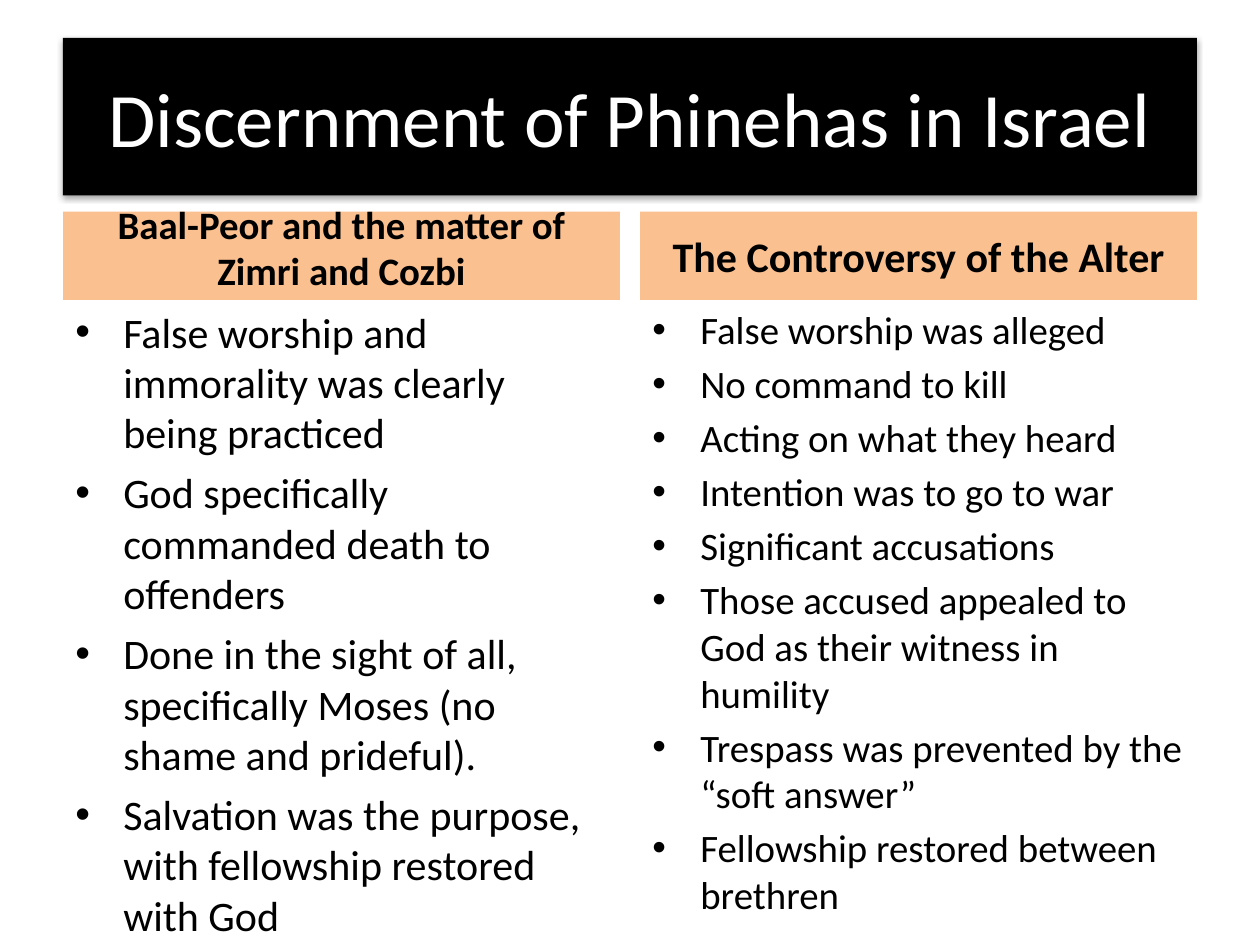
from lxml import etree
from pptx import Presentation
from pptx.dml.color import RGBColor
from pptx.enum.shapes import MSO_SHAPE
from pptx.enum.text import MSO_ANCHOR, PP_ALIGN
from pptx.oxml.ns import qn
from pptx.util import Inches, Pt

BLACK = RGBColor(0x00, 0x00, 0x00)
WHITE = RGBColor(0xFF, 0xFF, 0xFF)
PEACH = RGBColor(0xFA, 0xC0, 0x90)
RECT = MSO_SHAPE.RECTANGLE
CENTER = PP_ALIGN.CENTER
MIDDLE = MSO_ANCHOR.MIDDLE
BOTTOM = MSO_ANCHOR.BOTTOM
FONT = "Calibri"

WIDE, HIGH = 10, 7.5
EDGE, GAP = 0.5, 0.16
SPAN = WIDE - 2 * EDGE
COL = (SPAN - GAP) / 2
TOP, HEAD = 1.68, 0.7

COLUMNS = [
    ("Baal-Peor and the matter of Zimri and Cozbi", 22.2, BOTTOM, 4.77, 24, 5.5, [
        "False worship and immorality was clearly being practiced",
        "God specifically commanded death to offenders",
        "Done in the sight of all, specifically Moses (no shame and prideful).",
        "Salvation was the purpose, with fellowship restored with God",
    ]),
    ("The Controversy of the Alter", 24, MIDDLE, 4.32, 22.2, 4.2, [
        "False worship was alleged",
        "No command to kill",
        "Acting on what they heard",
        "Intention was to go to war",
        "Significant accusations",
        "Those accused appealed to God as their witness in humility",
        "Trespass was prevented by the “soft answer”",
        "Fellowship restored between brethren",
    ]),
]


def style(para, size, color, bold=False):
    """Set the font of a paragraph."""
    font = para.font
    font.name, font.size, font.bold = FONT, Pt(size), bold
    font.color.rgb = color


def add_bar(slide, box, fill, text, size, color, anchor, bold=False):
    """Place a filled bar with one centred text."""
    bar = slide.shapes.add_shape(RECT, *map(Inches, box))
    bar.shadow.inherit = False
    bar.fill.solid()
    bar.fill.fore_color.rgb = fill
    bar.line.fill.background()
    frame = bar.text_frame
    frame.word_wrap, frame.vertical_anchor = True, anchor
    para = frame.paragraphs[0]
    para.text, para.alignment = text, CENTER
    style(para, size, color, bold)
    return bar


def add_shade(shape):
    """Give a shape a soft shadow below it."""
    glow = shape._element.spPr.find(qn("a:effectLst"))
    shade = etree.SubElement(glow, qn("a:outerShdw"), blurRad=str(Pt(3.1)),
                             dist=str(Pt(1.8)), dir="5400000", rotWithShape="0")
    tint = etree.SubElement(shade, qn("a:srgbClr"), val=str(BLACK))
    etree.SubElement(tint, qn("a:alpha"), val="35000")


def add_list(slide, box, items, size, space):
    """Place a bulleted list."""
    frame = slide.shapes.add_textbox(*map(Inches, box)).text_frame
    frame.word_wrap = True
    for i, item in enumerate(items):
        para = frame.add_paragraph() if i else frame.paragraphs[0]
        para.text, para.space_before = item, Pt(space)
        style(para, size, BLACK)
        props = para._p.get_or_add_pPr()
        props.set("marL", str(Inches(0.38)))
        props.set("indent", str(-Inches(0.38)))
        dot = etree.Element(qn("a:buChar"), char="•")
        face = etree.Element(qn("a:buFont"), typeface="Arial")
        rest = props.find(qn("a:defRPr"))
        rest.addprevious(face)
        rest.addprevious(dot)


def add_column(slide, left, column):
    """Place a heading bar and the list below it."""
    head, size, anchor, tall, small, space, items = column
    add_bar(slide, (left, TOP, COL, HEAD), PEACH, head, size, BLACK, anchor, True)
    add_list(slide, (left, TOP + HEAD, COL, tall), items, small, space)


def main():
    """Build and save the slide."""
    deck = Presentation()
    deck.slide_width, deck.slide_height = Inches(WIDE), Inches(HIGH)
    slide = deck.slides.add_slide(deck.slide_layouts[6])
    title = add_bar(slide, (EDGE, 0.3, SPAN, 1.25), BLACK,
                    "Discernment of Phinehas in Israel", 44, WHITE, MIDDLE)
    add_shade(title)
    for i, column in enumerate(COLUMNS):
        add_column(slide, EDGE + i * (COL + GAP), column)
    deck.save("out.pptx")


if __name__ == "__main__":
    main()
